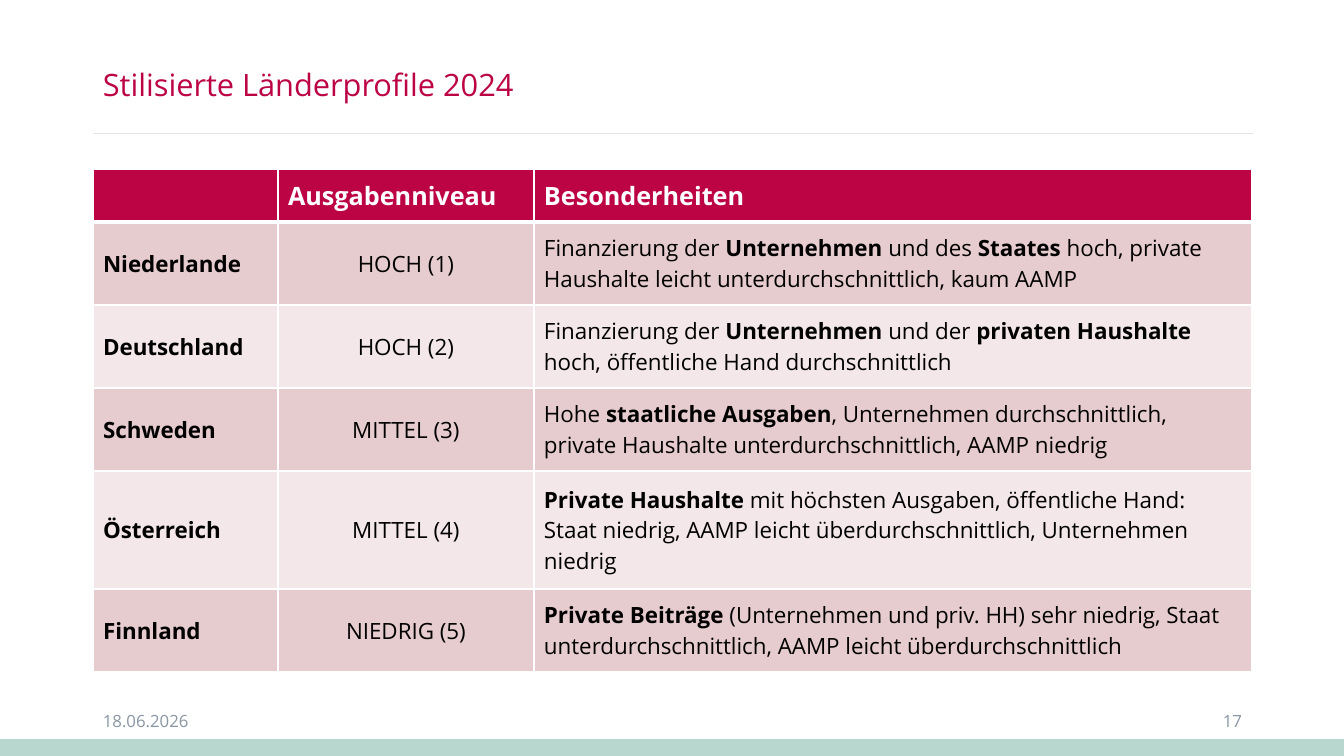
from dataclasses import dataclass

from lxml import etree
from pptx import Presentation
from pptx import util as u
from pptx.dml.color import RGBColor
from pptx.enum import shapes, text
from pptx.oxml import ns

EMU_PER_PX = 914400 / 100.8


@dataclass(frozen=True)
class Theme:
    font: str = "Open Sans"
    accent: str = "BC0444"
    mint: str = "B8D8CF"
    rule: str = "E4E4E3"
    muted: str = "8996A4"
    white: str = "FFFFFF"
    black: str = "000000"
    bands: tuple = ("E7CCCF", "F3E7E9")
    title_size: int = 22
    header_size: int = 18
    body_size: int = 16
    footer_size: int = 12


THEME = Theme()
LEFT, CENTER, RIGHT = text.PP_ALIGN.LEFT, text.PP_ALIGN.CENTER, text.PP_ALIGN.RIGHT

COLUMN_WIDTHS = (185, 256, 718)
ROW_HEIGHTS = (53, 83, 83, 83, 118, 83)
HEADERS = ("", "Ausgabenniveau", "Besonderheiten")
PROFILES = (
    ("Niederlande", "HOCH (1)",
     "Finanzierung der **Unternehmen** und des **Staates** hoch, private Haushalte "
     "leicht unterdurchschnittlich, kaum AAMP"),
    ("Deutschland", "HOCH (2)",
     "Finanzierung der **Unternehmen** und der **privaten Haushalte** hoch, "
     "öffentliche Hand durchschnittlich"),
    ("Schweden", "MITTEL (3)",
     "Hohe **staatliche Ausgaben**, Unternehmen durchschnittlich, private Haushalte "
     "unterdurchschnittlich, AAMP niedrig"),
    ("Österreich", "MITTEL (4)",
     "**Private Haushalte** mit höchsten Ausgaben, öffentliche Hand: Staat niedrig, "
     "AAMP leicht überdurchschnittlich, Unternehmen niedrig"),
    ("Finnland", "NIEDRIG (5)",
     "**Private Beiträge **(Unternehmen und priv. HH) sehr niedrig, Staat "
     "unterdurchschnittlich, AAMP leicht überdurchschnittlich"),
)


def px(length):
    return u.Emu(round(length * EMU_PER_PX))


def color(value):
    return RGBColor.from_string(value)


def write(para, marked, size, ink, align=LEFT):
    para.alignment = align
    for index, words in enumerate(marked.split("**")):
        if words:
            span = para.add_run()
            span.text = words
            span.font.name = THEME.font
            span.font.size = u.Pt(size)
            span.font.bold = index % 2 == 1
            span.font.color.rgb = color(ink)


def add_text(page, box, words, size, ink, align=LEFT, spacing=1.0):
    frame = page.shapes.add_textbox(*map(px, box)).text_frame
    frame.word_wrap = True
    frame.vertical_anchor = text.MSO_ANCHOR.MIDDLE
    para = frame.paragraphs[0]
    para.line_spacing = spacing
    write(para, words, size, ink, align)


def draw_title(page, box):
    left, top, width, height = box
    rule = page.shapes.add_connector(
        shapes.MSO_CONNECTOR.STRAIGHT,
        px(left), px(top + height), px(left + width), px(top + height))
    rule.line.color.rgb = color(THEME.rule)
    rule.line.width = u.Pt(0.5)
    etree.SubElement(rule._element.spPr, ns.qn("a:effectLst"))
    add_text(page, box, "Stilisierte Länderprofile 2024",
             THEME.title_size, THEME.accent, spacing=0.9)


def style_cell(cell, fill, top=1, bottom=1):
    properties = cell._tc.get_or_add_tcPr()
    for side, points in (("L", 1), ("R", 1), ("T", top), ("B", bottom)):
        border = etree.SubElement(properties, ns.qn("a:ln" + side), w=str(u.Pt(points)))
        solid = etree.SubElement(border, ns.qn("a:solidFill"))
        etree.SubElement(solid, ns.qn("a:srgbClr"), val=THEME.white)
    cell.fill.solid()
    cell.fill.fore_color.rgb = color(fill)
    cell.vertical_anchor = text.MSO_ANCHOR.MIDDLE


def draw_profiles(page, box):
    table = page.shapes.add_table(
        len(ROW_HEIGHTS), len(COLUMN_WIDTHS), *map(px, box)).table
    table.horz_banding = False
    for column, width in zip(table.columns, COLUMN_WIDTHS):
        column.width = px(width)
    for row, height in zip(table.rows, ROW_HEIGHTS):
        row.height = px(height)

    for column, heading in enumerate(HEADERS):
        cell = table.cell(0, column)
        style_cell(cell, THEME.accent, bottom=3)
        para = cell.text_frame.paragraphs[0]
        para.font.size = u.Pt(THEME.header_size)
        write(para, f"**{heading}**", THEME.header_size, THEME.white)

    for row, (country, level, details) in enumerate(PROFILES, 1):
        entries = ((f"**{country}**", LEFT), (level, CENTER), (details, LEFT))
        for column, (words, align) in enumerate(entries):
            cell = table.cell(row, column)
            style_cell(cell, THEME.bands[(row - 1) % 2], top=3 if row == 1 else 1)
            write(cell.text_frame.paragraphs[0], words,
                  THEME.body_size, THEME.black, align)


def draw_footer(page, box):
    left, top, width, height = box
    field = 302
    for start, words, align in ((left, "18.06.2026", LEFT),
                                (left + width - field, "17", RIGHT)):
        add_text(page, (start, top, field, height), words,
                 THEME.footer_size, THEME.muted, align)


def draw_band(page, box):
    band = page.shapes.add_shape(shapes.MSO_SHAPE.RECTANGLE, *map(px, box))
    band.shadow.inherit = False
    band.fill.solid()
    band.fill.fore_color.rgb = color(THEME.mint)
    band.line.color.rgb = color(THEME.mint)
    band.line.width = u.Pt(1)


def main():
    deck = Presentation()
    deck.slide_width, deck.slide_height = px(1344), px(756)
    page = deck.slides.add_slide(deck.slide_layouts[6])
    draw_band(page, (0, 740, 1344, 16))
    draw_title(page, (93, 40, 1160, 93))
    draw_profiles(page, (93, 169, sum(COLUMN_WIDTHS), sum(ROW_HEIGHTS)))
    draw_footer(page, (93, 701, 1159, 40))
    deck.save("out.pptx")


if __name__ == "__main__":
    main()
